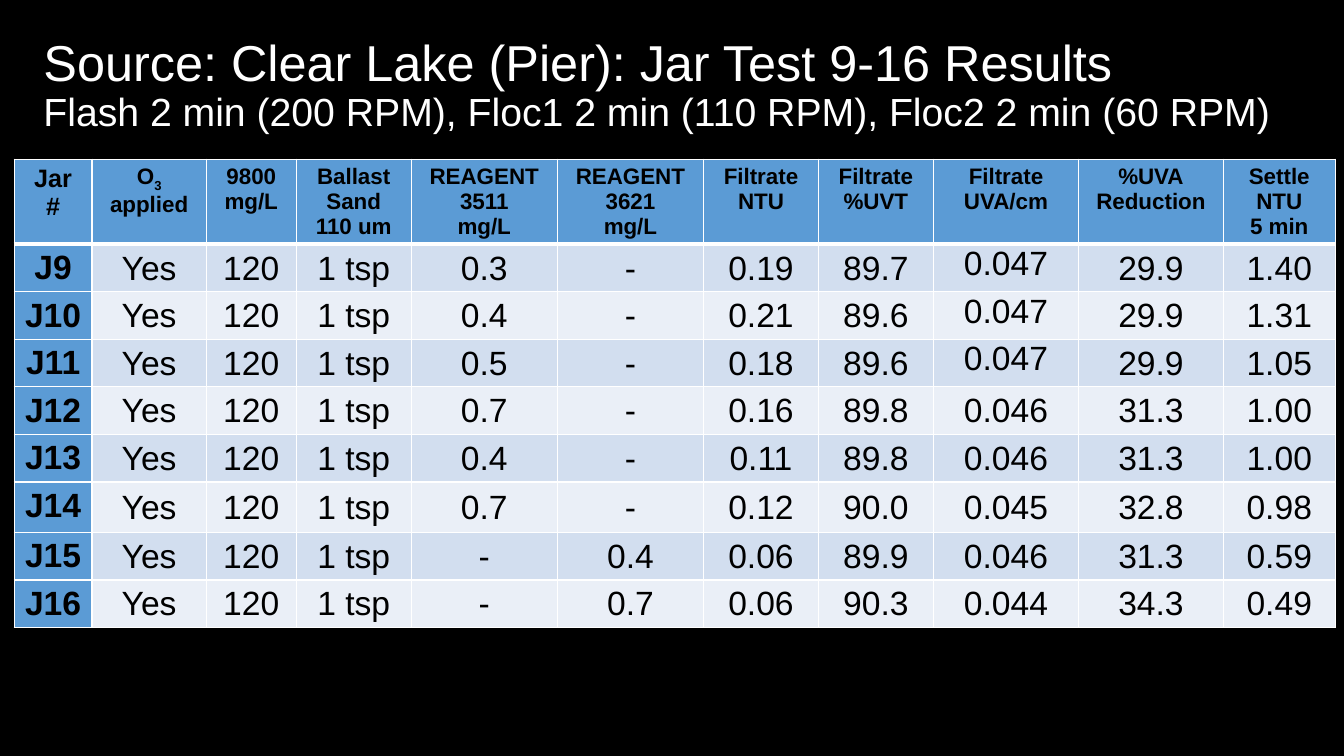
from lxml.etree import SubElement
from pptx import Presentation
from pptx.dml.color import RGBColor
from pptx.enum.text import MSO_ANCHOR, PP_ALIGN
from pptx.oxml.ns import qn
from pptx.util import Inches, Pt

BLACK = RGBColor(0x00, 0x00, 0x00)
WHITE = RGBColor(0xFF, 0xFF, 0xFF)
BLUE = RGBColor(0x5B, 0x9B, 0xD5)
BANDS = (RGBColor(0xD2, 0xDE, 0xEF), RGBColor(0xEA, 0xEF, 0xF7))

TITLE_LINES = (
    ("Source: Clear Lake (Pier): Jar Test 9-16 Results", 36),
    ("Flash 2 min (200 RPM), Floc1 2 min (110 RPM), Floc2 2 min (60 RPM)", 28),
)
# Heading lines and column width in percent of the slide's width
COLUMNS = (
    (("Jar #",), 5.8),
    (("O₃", "applied"), 8.5),
    (("9800", "mg/L"), 6.7),
    (("Ballast", "Sand", "110 um"), 8.55),
    (("REAGENT", "3511", "mg/L"), 10.88),
    (("REAGENT", "3621", "mg/L"), 10.88),
    (("Filtrate", "NTU"), 8.55),
    (("Filtrate", "%UVT"), 8.55),
    (("Filtrate", "UVA/cm"), 10.82),
    (("%UVA", "Reduction"), 10.75),
    (("Settle", "NTU", "5 min"), 8.35),
)
SAME_FOR_ALL = ("Yes", "120", "1 tsp")
JARS = {
    "J9": ("0.3", "-", "0.19", "89.7", "0.047", "29.9", "1.40"),
    "J10": ("0.4", "-", "0.21", "89.6", "0.047", "29.9", "1.31"),
    "J11": ("0.5", "-", "0.18", "89.6", "0.047", "29.9", "1.05"),
    "J12": ("0.7", "-", "0.16", "89.8", "0.046", "31.3", "1.00"),
    "J13": ("0.4", "-", "0.11", "89.8", "0.046", "31.3", "1.00"),
    "J14": ("0.7", "-", "0.12", "90.0", "0.045", "32.8", "0.98"),
    "J15": ("-", "0.4", "0.06", "89.9", "0.046", "31.3", "0.59"),
    "J16": ("-", "0.7", "0.06", "90.3", "0.044", "34.3", "0.49"),
}
UVA_COLUMN = 8
TOP_ALIGNED_JARS = ("J9", "J10", "J11")
HEADER_HEIGHT, JAR_HEIGHT, TALL_HEIGHT = 11.1, 6.28, 6.67
TALL_JAR = "J14"


class SlideBuilder:
    """Draws on one slide; lengths are percent of its width or height."""

    font = "Arial"

    def __init__(self, deck):
        self.deck = deck
        self.page = deck.slides.add_slide(deck.slide_layouts[5])
        self.page.background.fill.solid()
        self.page.background.fill.fore_color.rgb = BLACK

    def across(self, percent):
        return round(self.deck.slide_width * percent / 100)

    def down(self, percent):
        return round(self.deck.slide_height * percent / 100)

    def span(self, para, text, size, color, bold=False):
        span = para.add_run()
        span.text = text
        span.font.name = self.font
        span.font.size = Pt(size)
        span.font.bold = bold
        span.font.color.rgb = color
        return span

    def title(self, lines, left, top, width, height):
        box = self.page.shapes.title
        box.left, box.top = self.across(left), self.down(top)
        box.width, box.height = self.across(width), self.down(height)
        box.text_frame.word_wrap = True
        box.text_frame.vertical_anchor = MSO_ANCHOR.MIDDLE
        para = box.text_frame.paragraphs[0]
        para.alignment = PP_ALIGN.LEFT
        para.line_spacing = 0.9
        for index, (text, size) in enumerate(lines):
            if index:
                para.add_line_break()
            self.span(para, text, size, WHITE)

    def table(self, left, top, widths, heights):
        frame = self.page.shapes.add_table(
            len(heights), len(widths), self.across(left), self.down(top),
            self.across(sum(widths)), self.down(sum(heights)))
        table = frame.table
        table.first_row = table.horz_banding = False
        for column, width in zip(table.columns, widths):
            column.width = self.across(width)
        for row, height in zip(table.rows, heights):
            row.height = self.down(height)
        return table

    def borders(self, cell, top=1, bottom=1):
        properties = cell._tc.get_or_add_tcPr()
        for side, points in (("L", 1), ("R", 1), ("T", top), ("B", bottom)):
            line = SubElement(properties, qn(f"a:ln{side}"), w=str(Pt(points)))
            fill = SubElement(line, qn("a:solidFill"))
            SubElement(fill, qn("a:srgbClr"), val=str(WHITE))

    def cell(self, cell, lines, size, fill, bold=False):
        cell.fill.solid()
        cell.fill.fore_color.rgb = fill
        for index, line in enumerate(lines):
            frame = cell.text_frame
            para = frame.add_paragraph() if index else frame.paragraphs[0]
            para.alignment = PP_ALIGN.CENTER
            text, subscript, _ = line.partition("₃")
            self.span(para, text, size, BLACK, bold)
            if subscript:
                lowered = self.span(para, "3", size, BLACK, bold)
                lowered._r.get_or_add_rPr().set("baseline", "-25000")

    def value_cell(self, cell, text, fill, anchor):
        self.cell(cell, (text,), 24, fill)
        cell.margin_left = cell.margin_right = cell.margin_top = Inches(0.01)
        cell.margin_bottom = 0
        cell.vertical_anchor = anchor


def main():
    deck = Presentation()
    deck.slide_width, deck.slide_height = Inches(13.33), Inches(7.5)
    slide = SlideBuilder(deck)
    slide.title(TITLE_LINES, 2.48, 1.73, 93.55, 19.33)

    widths = [width for _, width in COLUMNS]
    heights = [HEADER_HEIGHT]
    heights += [TALL_HEIGHT if jar == TALL_JAR else JAR_HEIGHT for jar in JARS]
    table = slide.table(1.05, 21.07, widths, heights)

    for column, (heading, _) in enumerate(COLUMNS):
        cell = table.cell(0, column)
        slide.borders(cell, bottom=3)
        slide.cell(cell, heading, 16 if column else 18, BLUE, bold=True)

    for row, (jar, results) in enumerate(JARS.items(), start=1):
        for column, text in enumerate((jar, *SAME_FOR_ALL, *results)):
            cell = table.cell(row, column)
            slide.borders(cell, top=3 if row == 1 else 1)
            if column == 0:
                slide.cell(cell, (text,), 24, BLUE, bold=True)
                continue
            at_top = column == UVA_COLUMN and jar in TOP_ALIGNED_JARS
            anchor = MSO_ANCHOR.TOP if at_top else MSO_ANCHOR.MIDDLE
            slide.value_cell(cell, text, BANDS[(row - 1) % 2], anchor)

    deck.save("out.pptx")


if __name__ == "__main__":
    main()
